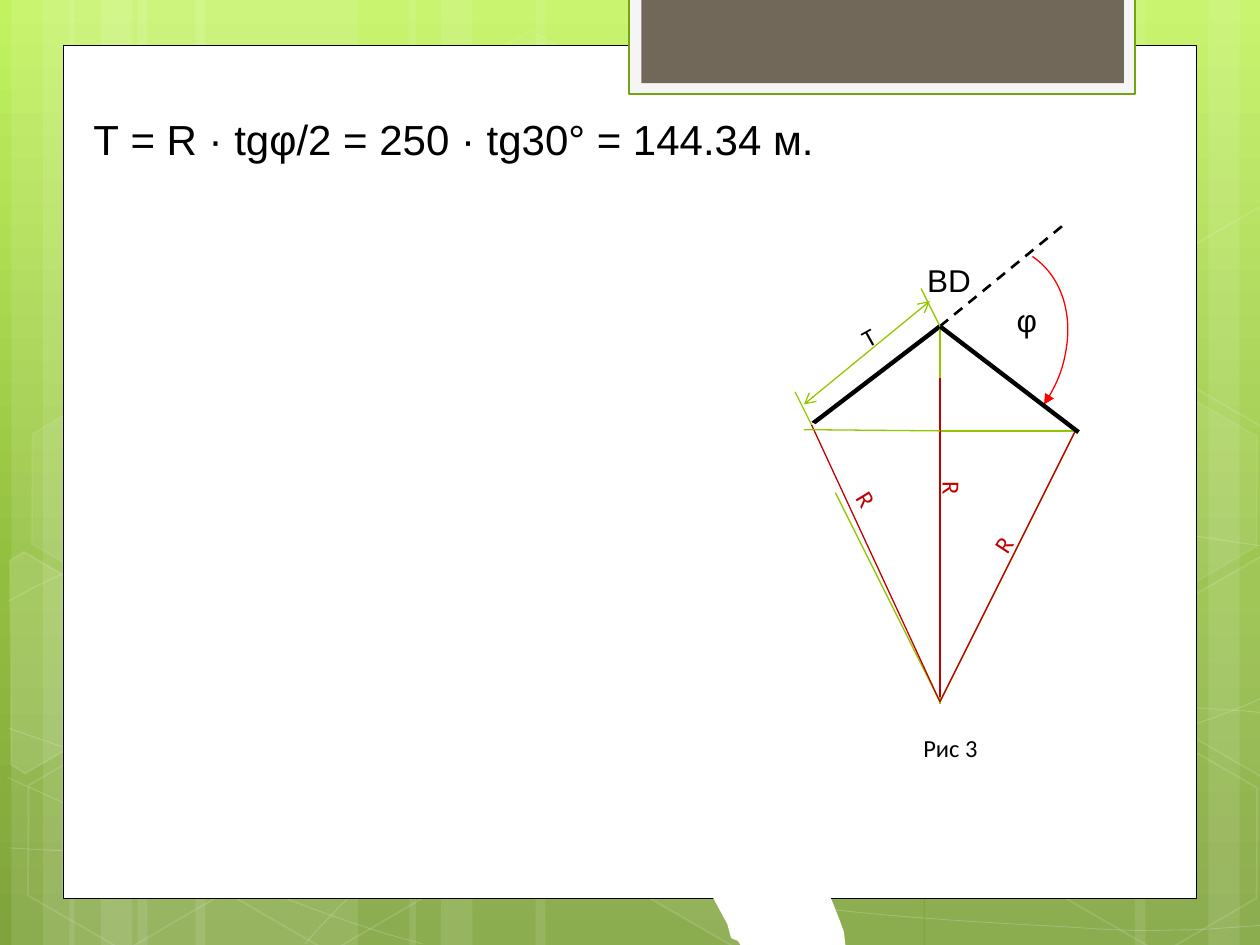
"""Builds the tangent length slide: a formula and a road curve diagram on a green theme."""
from copy import deepcopy

from lxml.etree import SubElement
from pptx import Presentation
from pptx.dml.color import RGBColor
from pptx.enum.dml import MSO_LINE
from pptx.enum.shapes import MSO_CONNECTOR, MSO_SHAPE
from pptx.enum.text import MSO_ANCHOR, PP_ALIGN
from pptx.oxml.ns import qn
from pptx.util import Inches, Pt

CELL = Inches(0.1)
COLUMNS, ROWS = 100, 75
COLORS = {
    "white": "FFFFFF", "black": "000000", "green": "94C600", "radius": "C00000",
    "angle": "FF0000", "tab": "F5F5F5", "tab_edge": "74A510", "tab_core": "71685A",
    "sky": "C2F35F", "leaf": "92BE3F", "moss": "80A33D",
}

APEX, CENTRE = (74.6, 25.9), (74.6, 55.7)
LEFT, RIGHT = (64.4, 33.7), (85.4, 34.1)
CHORD_LEFT, CHORD_MIDDLE = (63.8, 34.1), (74.6, 34.2)

WAVES = [
    [(0.7, 67.3), (6.1, 67.6), (11.5, 67.9), (19, 67.8), (26.5, 67.7), (35.8, 67.5),
     (45.8, 66.5), (55.8, 65.5), (70, 63.6), (79.2, 61.7), (88.3, 59.8), (97.7, 56.8),
     (100.7, 55.1)],
    [(0.7, 47.7), (3.6, 46.1), (6.5, 44.6), (12.1, 43.1), (17.8, 41.6), (25.9, 39.4),
     (34.7, 38.7), (43.6, 38), (54.4, 37.9), (65.4, 38.7), (76.4, 39.5), (94.7, 42.6),
     (100.7, 43.4)],
    [(0.6, 61.7), (12.7, 67.2), (24.7, 72.7), (33.5, 74.9)],
    [(0.7, 57.8), (3.8, 58.9), (7, 60), (12.8, 61.6), (18.6, 63.1), (27.3, 65.6),
     (35.7, 67.3), (44, 69), (54.5, 70.8), (62.8, 71.8), (71.1, 72.9), (80, 73.3),
     (85.3, 73.6), (90.6, 74), (91.9, 73.8), (94.5, 73.8), (97.1, 73.7), (98.9, 73.5),
     (100.7, 73.4)],
    [(24.2, 74.9), (26, 72.9), (27.8, 70.9), (30.2, 69.1), (32.6, 67.2), (36, 65.3),
     (38.8, 63.9), (41.6, 62.5), (43.3, 61.9), (46.9, 60.9), (50.6, 59.9), (57.3, 58.5),
     (60.8, 57.8), (64.4, 57.1), (64.9, 57.1), (68, 56.9), (71.1, 56.6), (76, 56.3),
     (79.4, 56.2), (82.9, 56.1), (88.6, 56.2), (95.3, 56.2), (97.1, 56.3), (98.8, 56.4),
     (100.6, 56.6)],
]
HEXAGONS = [
    (33.4, 3.6, 4, 8), (49.7, 58.9, 6, 12), (1.1, 59.1, 0, 12), (1.4, 31.2, 7, 8),
    (17.4, 59.2, 0, 12), (75.3, 45.3, 10, 12), (83.4, 59.3, 0, 12), (83.4, 31.4, 7, 8),
]
CUT_HEXAGONS = [
    ([(0.8, 44.5), (1.9, 43.8), (9.6, 48.3), (9.5, 57), (2, 61.4), (0.9, 60.7)], 10),
    ([(92.6, 48.5), (100.2, 44.1), (100.9, 44.6), (100.9, 61.3), (100.2, 61.7),
      (92.6, 57.3)], 4),
    ([(92.6, 20.7), (100.2, 16.3), (101, 16.8), (100.9, 33.5), (100.2, 33.9),
      (92.6, 29.5)], 0),
]
BLOT = [
    (65.3, 34.1), (63.5, 33.1), (62.1, 33.3), (60.2, 34.7), (58, 37.5), (55.9, 41),
    (54.7, 44), (53, 47.4), (52.3, 50.2), (52.4, 60.9), (53.6, 64.3), (54.2, 66.9),
    (55.6, 69.5), (56.5, 70.9), (57.8, 73.3), (58.1, 74.4), (58.6, 74.6), (59.3, 75.6),
    (61.1, 77.6), (62.4, 78.2), (66.6, 78), (67.2, 76.8), (66.9, 74), (66.5, 72.9),
    (65.7, 70.9), (64.7, 68.1), (63.9, 66.1), (63.2, 63.5), (62.7, 61.3), (62.3, 54.2),
    (62.4, 47.8), (63.6, 44.4), (65, 41.2), (66.6, 38.4), (68.5, 35.1), (68.4, 32.5),
    (67.9, 32.1), (66.8, 33.5),
]
LABELS = [
    ("Т", (67.5, 25.1, 3, 3.4), 330.8, False, {"size": 14, "name": "Calibri"}, "black"),
    ("Рис 3", (72.3, 57.7, 6.4, 3.4), 0, False, {"size": 14, "name": "Calibri"}, "black"),
    ("R", (66.6, 39.1, 5.7, 3.4), 58.5, True, {"size": 14, "name": "Calibri"}, "radius"),
    ("R", (74, 37.1, 3.1, 3.4), 90, False, {"size": 14, "name": "Calibri"}, "radius"),
    ("R", (78.1, 41.5, 3.1, 3.4), 303.2, False, {"size": 14, "name": "Calibri"}, "radius"),
    ("BD", (72.6, 20.2, 6.2, 4), 0, True, {"size": 18, "name": "Arial"}, "black"),
    ("φ", (79.7, 23.4, 5.5, 4), 0, True, {"size": 18, "name": "Arial"}, "black"),
]


def cells(*counts):
    """Turn counts of grid cells into lengths."""
    return [round(count * CELL) for count in counts]


def paint(fill, color, opacity=100):
    """Give a fill one colour with an opacity in percent."""
    fill.solid()
    fill.fore_color.rgb = RGBColor.from_string(COLORS[color])
    if opacity < 100:
        tint = fill._xPr.find(qn("a:solidFill"))[0]
        SubElement(tint, qn("a:alpha"), val=str(opacity * 1000))


def dress(shape, fill=None, opacity=100, edge=None, width=0, edge_opacity=100):
    """Set the fill and outline of a shape and drop its shadow."""
    shape.shadow.inherit = False
    if fill and opacity:
        paint(shape.fill, fill, opacity)
    else:
        shape.fill.background()
    if edge:
        paint(shape.line.fill, edge, edge_opacity)
        shape.line.width = Pt(width)
    else:
        shape.line.fill.background()


def add_preset(slide, kind, box, **look):
    """Add a preset shape in a box of grid cells."""
    shape = slide.shapes.add_shape(kind, *cells(*box))
    dress(shape, **look)
    return shape


def add_outline(slide, points, close=True, **look):
    """Add a freeform through the given grid points."""
    start, *rest = [cells(*point) for point in points]
    builder = slide.shapes.build_freeform(*start)
    builder.add_line_segments(rest, close=close)
    dress(builder.convert_to_shape(), **look)


def curve_points(controls, steps=10):
    """Sample a chain of cubic curves."""
    points = [controls[0]]
    for first in range(0, len(controls) - 1, 3):
        piece = controls[first:first + 4]
        for step in range(1, steps + 1):
            t = step / steps
            weights = ((1 - t) ** 3, 3 * t * (1 - t) ** 2, 3 * t * t * (1 - t), t ** 3)
            points.append(tuple(sum(w * p[axis] for w, p in zip(weights, piece))
                                for axis in (0, 1)))
    return points


def add_arrowheads(line, **ends):
    """Put arrowheads on the named ends of a line."""
    for end, kind in ends.items():
        SubElement(line._get_or_add_ln(), qn(f"a:{end}"), type=kind)


def add_segment(slide, start, end, color, width=0.75, dash=None):
    """Add a straight line between two grid points."""
    segment = slide.shapes.add_connector(MSO_CONNECTOR.STRAIGHT, *cells(*start, *end))
    paint(segment.line.fill, color)
    segment.line.width = Pt(width)
    if dash:
        segment.line.dash_style = dash
    SubElement(segment._element.spPr, qn("a:effectLst"))
    return segment


def format_text(frame, text, font, color, wrap=True):
    """Write one paragraph and format it."""
    frame.text = text
    frame.word_wrap = wrap
    frame.vertical_anchor = MSO_ANCHOR.TOP
    paragraph = frame.paragraphs[0]
    paragraph.alignment = PP_ALIGN.LEFT
    for key, value in font.items():
        setattr(paragraph.font, key, Pt(value) if key == "size" else value)
    paragraph.font.color.rgb = RGBColor.from_string(COLORS[color])


def add_backdrop(slide):
    """Draw the gradient, stripes, waves and hexagons of the theme."""
    fill = slide.background.fill
    fill.gradient()
    fill.gradient_angle = 270
    stops = fill.gradient_stops[0]._gs.getparent()
    stops.append(deepcopy(stops[-1]))
    for stop, color, place in zip(fill.gradient_stops, ("sky", "leaf", "moss"), (0, 0.62, 1)):
        stop.color.rgb = RGBColor.from_string(COLORS[color])
        stop.position = place
    for base, wide, mirrored in ((0.9, 17.5, False), (5.5, 17.5, False),
                                 (-0.9, 17.5, True), (32.5, 30.8, False)):
        for offset, width in ((10, wide), (0, 5), (2.5, 8.3)):
            left = base + offset
            if mirrored:
                left = COLUMNS - left - width
            add_preset(slide, MSO_SHAPE.RECTANGLE, (left, 0, width, ROWS),
                       fill="white", opacity=10)
    for wave in WAVES:
        add_outline(slide, curve_points(wave), close=False,
                    edge="white", width=0.5, edge_opacity=20)
    for left, top, opacity, edge_opacity in HEXAGONS:
        hexagon = add_preset(slide, MSO_SHAPE.HEXAGON, (left, top, 17.5, 15.2), fill="white",
                             opacity=opacity, edge="white", width=1, edge_opacity=edge_opacity)
        hexagon.adjustments[0] = 0.285
        hexagon.rotation = 30
    for points, opacity in CUT_HEXAGONS:
        add_outline(slide, points, fill="white", opacity=opacity,
                    edge="white", width=1, edge_opacity=12)


def add_panel(slide):
    """Draw the white sheet and the tab at its top."""
    for box, look in (
        ((5, 3.6, 90, 67.7), {"fill": "white", "edge": "black", "width": 0.5}),
        ((49.9, -0.2, 40.2, 7.7), {"fill": "tab", "edge": "tab_edge", "width": 1.25}),
        ((50.9, -0.2, 38.3, 6.8), {"fill": "tab_core"}),
    ):
        add_preset(slide, MSO_SHAPE.RECTANGLE, box, **look)


def add_diagram(slide):
    """Draw the tangents, radii, turning angle and their labels."""
    add_segment(slide, LEFT, APEX, "black", 2.5)
    add_segment(slide, CHORD_MIDDLE, (85.5, 34.2), "green")
    for end in (CHORD_LEFT, RIGHT):
        add_segment(slide, CENTRE, end, "green")
    add_segment(slide, APEX, (74.6, 55.9), "green")
    add_outline(slide, BLOT, fill="white", edge="white", width=1.25)
    add_segment(slide, (74.6, 55.3), (74.6, 30), "radius")
    for end in (RIGHT, LEFT):
        add_segment(slide, CENTRE, end, "radius")
    add_segment(slide, APEX, (84.6, 17.7), "black", 1.5, MSO_LINE.DASH)
    turn = add_preset(slide, MSO_SHAPE.ARC, (69.5, 18.8, 14.6, 18.5), edge="angle", width=0.75)
    turn.rotation = 33.8
    add_arrowheads(turn.line, tailEnd="triangle")
    add_segment(slide, APEX, (85.6, 34.3), "black", 2.5)
    add_segment(slide, LEFT, (63.1, 31.1), "green")
    add_segment(slide, APEX, (73.1, 22.9), "green")
    tangent = add_segment(slide, (63.8, 32.1), (73.8, 23.9), "green")
    add_arrowheads(tangent.line, headEnd="arrow", tailEnd="arrow")
    for text, box, angle, wrap, font, color in LABELS:
        label = slide.shapes.add_textbox(*cells(*box))
        label.rotation = angle
        format_text(label.text_frame, text, font, color, wrap)
    add_segment(slide, CHORD_MIDDLE, CHORD_LEFT, "green")


def add_formula(slide):
    """Place the formula in the title, in front of the sheet."""
    formula = slide.shapes.title
    for side, length in zip(("left", "top", "width", "height"), cells(5.5, 8.5, 85.9, 5.1)):
        setattr(formula, side, length)
    formula.text_frame.margin_left = Inches(0.19)
    format_text(formula.text_frame, "Т = R · tgφ/2 = 250 · tg30° = 144.34 м.",
                {"size": 24, "name": "Arial"}, "black")
    formula._element.getparent().append(formula._element)


def main():
    """Build and save the slide."""
    deck = Presentation()
    deck.slide_width, deck.slide_height = cells(COLUMNS, ROWS)
    slide = deck.slides.add_slide(deck.slide_layouts[5])
    add_backdrop(slide)
    add_panel(slide)
    add_diagram(slide)
    add_formula(slide)
    deck.save("out.pptx")


if __name__ == "__main__":
    main()
